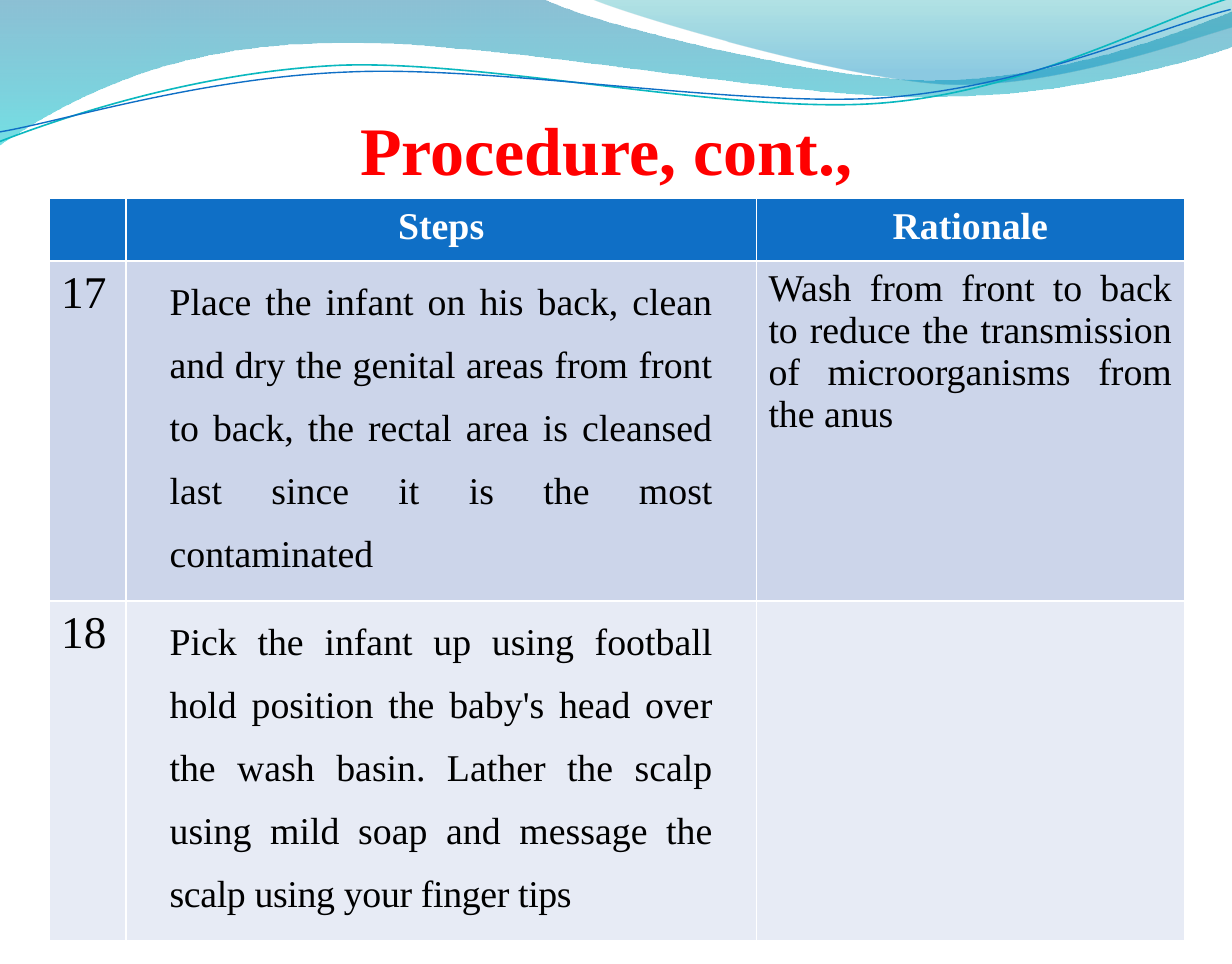
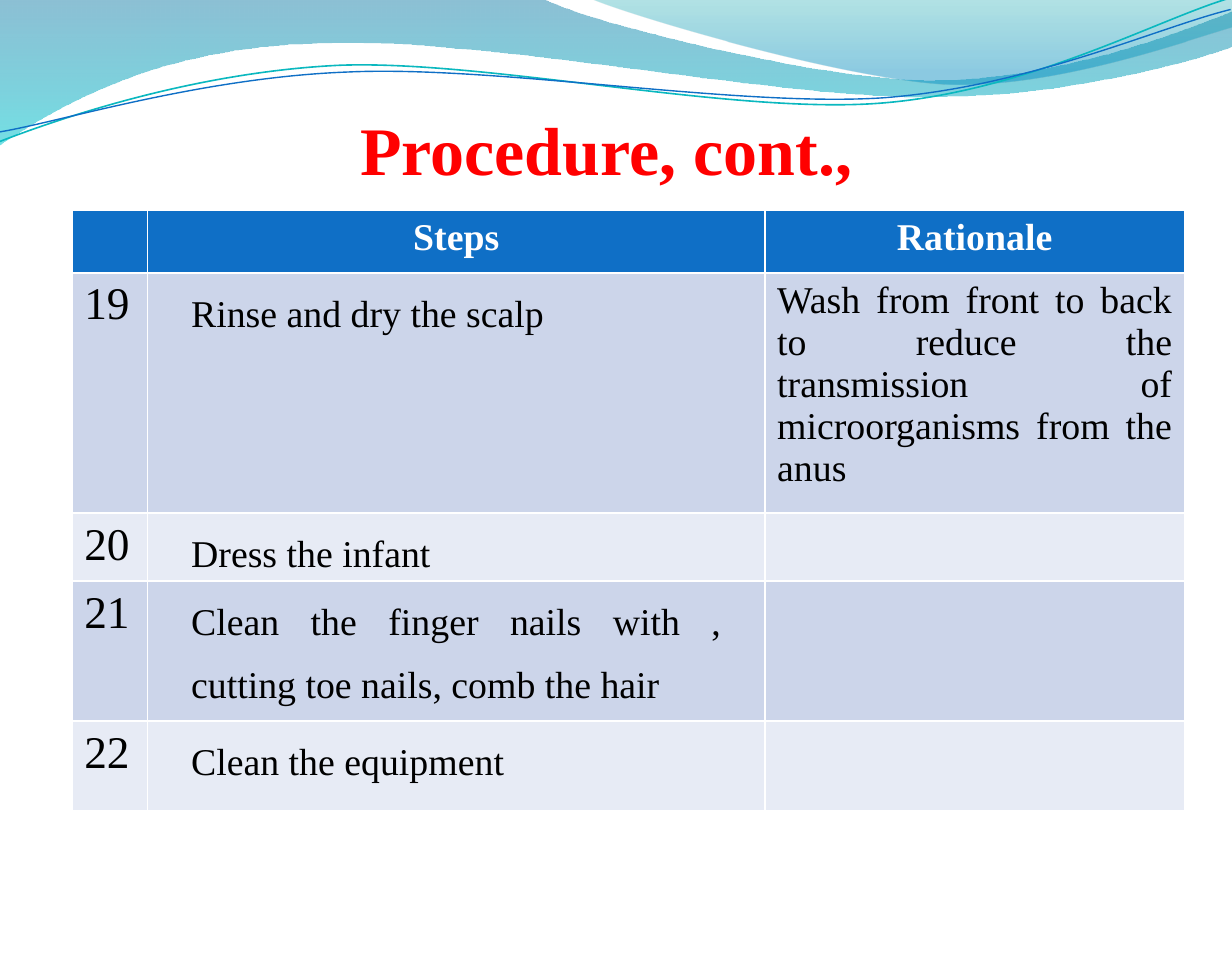
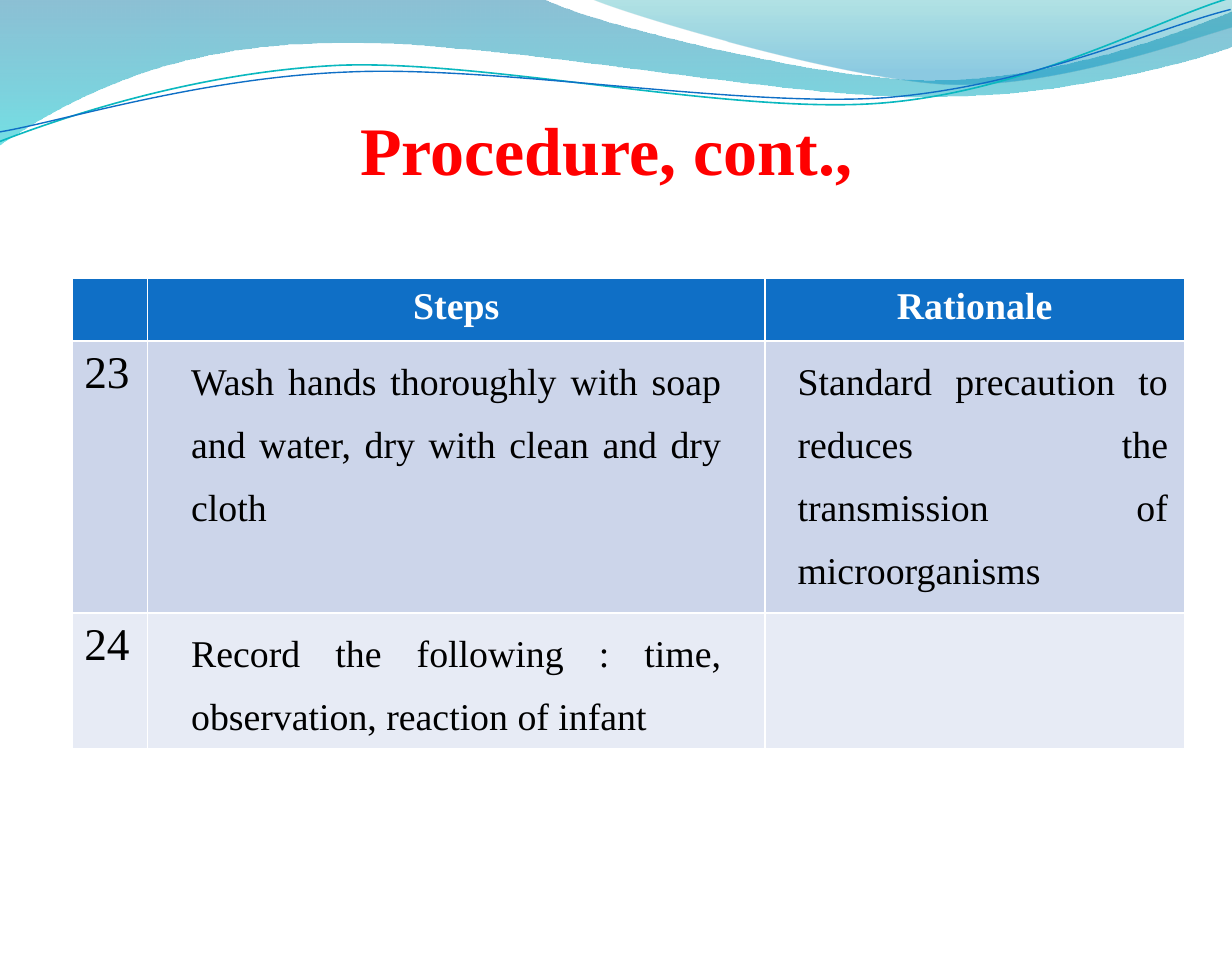
"""Builds three slides of a nursing procedure, each with a wave band, a title and a step table."""
from pptx import Presentation
from pptx.dml.color import RGBColor
from pptx.enum.text import MSO_ANCHOR, PP_ALIGN
from pptx.oxml.ns import qn
from pptx.util import Inches, Pt
from lxml.etree import SubElement

FONT = "Times New Roman"
RED = RGBColor(0xFF, 0x00, 0x00)
WHITE = RGBColor(0xFF, 0xFF, 0xFF)
BLACK = RGBColor(0x00, 0x00, 0x00)
BLUE = RGBColor(0x0F, 0x6F, 0xC6)
TEAL = RGBColor(0x0A, 0xB8, 0xBF)
DARK_BAND = RGBColor(0xCC, 0xD5, 0xEA)
LIGHT_BAND = RGBColor(0xE7, 0xEB, 0xF5)
WAVE_DEEP = RGBColor(0x00, 0x74, 0xA1)
WAVE_CYAN = RGBColor(0x00, 0xC6, 0xCF)
WAVE_GREEN = RGBColor(0x00, 0xA1, 0xA9)
WAVE_BLUE = RGBColor(0x00, 0x8B, 0xBF)

COLUMN_SHARES = (0.068, 0.555, 0.377)
TABLE_RIGHT = 96.14

WAVES = [
    ([(0, 0), (3.99, -0.01), (4.31, 0.16, 6.01, 0.59, 6.87, 0.59),
      (7.73, 0.59, 8.68, 0.24, 9.06, 0.08), (9.06, 0.34),
      (8.9, 0.41, 7.88, 0.72, 6.75, 0.71), (5.63, 0.71, 3.46, 0.26, 2.33, 0.32),
      (1.17, 0.34, 0.42, 0.78, -0.01, 1.07)],
     [(0, WAVE_DEEP, 45), (1, WAVE_CYAN, 55)]),
    ([(4.34, -0.01), (4.61, 0.11, 6.18, 0.58, 6.96, 0.62),
      (7.75, 0.65, 8.71, 0.3, 9.06, 0.2), (9.06, 0)],
     [(0, WAVE_GREEN, 30), (0.8, WAVE_BLUE, 45)]),
]
STRANDS = [
    ([(0, 1.04), (0.44, 0.87, 1.43, 0.53, 2.5, 0.48),
      (3.58, 0.44, 5.37, 0.84, 6.46, 0.76), (7.54, 0.68, 8.5, 0.15, 9.03, -0.01)],
     TEAL, 0.85),
    ([(0, 0.97), (0.43, 0.9, 1.48, 0.57, 2.56, 0.53),
      (3.65, 0.48, 5.41, 0.79, 6.49, 0.72), (7.57, 0.64, 8.52, 0.2, 9.05, 0.07)],
     BLUE, 0.75),
]

WASH = "Wash from front to back to reduce the transmission of microorganisms from the anus"
TIGHT_ENDING = " scalp using your finger tips"
TABLES = [
    (3.97, 20.6, [6.5, 32.6, 32.6], [
        ("17", "Place the infant on his back, clean and dry the genital areas from front to back, "
               "the rectal area is cleansed last since it is the most contaminated", WASH),
        ("18", "Pick the infant up using football hold position the baby's head over the wash "
               "basin. Lather the scalp using mild soap and message the" + TIGHT_ENDING, ""),
    ]),
    (5.85, 21.8, [6.5, 23.4, 6.5, 14.5, 9.3], [
        ("19", "Rinse and dry the scalp", WASH),
        ("20", "Dress the infant", ""),
        ("21", "Clean the finger nails with , cutting toe nails, comb the hair", ""),
        ("22", "Clean the equipment", ""),
    ]),
    (5.85, 28.9, [6.5, 26, 13.1], [
        ("23", "Wash hands thoroughly with soap and water, dry with clean and dry cloth",
         "Standard precaution to reduces the transmission of microorganisms"),
        ("24", "Record the following : time, observation, reaction of infant", ""),
    ]),
]


def write(frame, text, size=20, color=BLACK, bold=False, align=PP_ALIGN.JUSTIFY, spacing=None):
    para = frame.paragraphs[0]
    para.alignment = align
    if spacing:
        para.line_spacing = spacing
    for piece in text.partition(TIGHT_ENDING):
        if piece:
            span = para.add_run()
            span.text = piece
            span.font.name = FONT
            span.font.size = Pt(size)
            span.font.bold = bold
            span.font.color.rgb = color
            if piece == TIGHT_ENDING:
                span.font._element.set("spc", "-20")


def draw_outline(page, outline, closed):
    points = [(Inches(x), Inches(y)) for segment in outline
              for x, y in zip(segment[::2], segment[1::2])]
    builder = page.shapes.build_freeform(*points[0])
    builder.add_line_segments(points[1:], close=closed)
    shape = builder.convert_to_shape()
    shape.shadow.inherit = False
    corners = iter(list(shape.element.iter(qn("a:lnTo"))))
    for segment in outline[1:]:
        corner = next(corners)
        if len(segment) == 6:
            corner.tag = qn("a:cubicBezTo")
            for _ in range(2):
                control = next(corners)
                corner.append(control[0])
                control.getparent().remove(control)
    return shape


deck = Presentation()
deck.slide_width = Inches(9.06)
deck.slide_height = Inches(7.09)
column = deck.slide_width / 100
row = deck.slide_height / 100
blank = deck.slide_layouts[6]
pages = [deck.slides.add_slide(blank) for _ in TABLES]

band = []
for outline, stops in WAVES:
    wave = draw_outline(pages[0], outline, True)
    wave.line.fill.background()
    wave.fill.gradient()
    wave.fill.gradient_angle = 270
    for stop, (position, color, _) in zip(wave.fill.gradient_stops, stops):
        stop.position = position
        stop.color.rgb = color
    for tint, (_, _, opacity) in zip(wave.element.iter(qn("a:srgbClr")), stops):
        SubElement(tint, qn("a:alpha")).set("val", str(opacity * 1000))
    band.append(wave)
for outline, color, width in STRANDS:
    strand = draw_outline(pages[0], outline, False)
    strand.fill.background()
    strand.line.color.rgb = color
    strand.line.width = Pt(width)
    band.append(strand)
for shape in band:
    blank.shapes.element.append(shape.element)

for page, (left, top, heights, steps) in zip(pages, TABLES):
    box = page.shapes.add_textbox(int(4.9 * column), int(3 * row), int(90 * column), int(16.6 * row))
    frame = box.text_frame
    frame.word_wrap = True
    frame.vertical_anchor = MSO_ANCHOR.BOTTOM
    frame.margin_left = frame.margin_right = frame.margin_bottom = 0
    write(frame, "Procedure, cont., ", size=36, color=RED, bold=True, align=PP_ALIGN.CENTER)

    width = (TABLE_RIGHT - left) * column
    table = page.shapes.add_table(len(heights), len(COLUMN_SHARES), int(left * column),
                                  int(top * row), int(width), int(sum(heights) * row)).table
    for table_column, share in zip(table.columns, COLUMN_SHARES):
        table_column.width = int(width * share)
    for table_row, height in zip(table.rows, heights):
        table_row.height = int(height * row)

    for r, texts in enumerate([("", "Steps", "Rationale")] + steps):
        for c, text in enumerate(texts):
            cell = table.cell(r, c)
            cell.fill.solid()
            cell.fill.fore_color.rgb = BLUE if r == 0 else DARK_BAND if r % 2 else LIGHT_BAND
            cell.margin_left = cell.margin_right = Inches(0.09)
            if not text:
                continue
            if r == 0:
                write(cell.text_frame, text, color=WHITE, bold=True, align=PP_ALIGN.CENTER)
            elif c == 0:
                write(cell.text_frame, text, size=24, align=PP_ALIGN.LEFT)
            elif text == WASH:
                write(cell.text_frame, text)
            else:
                cell.margin_top = cell.margin_bottom = 0
                cell.margin_left = Inches(0.32 if c == 1 else 0.24)
                cell.margin_right = Inches(0.32 if c == 1 else 0.12)
                write(cell.text_frame, text, spacing=1.5)

deck.save("out.pptx")
